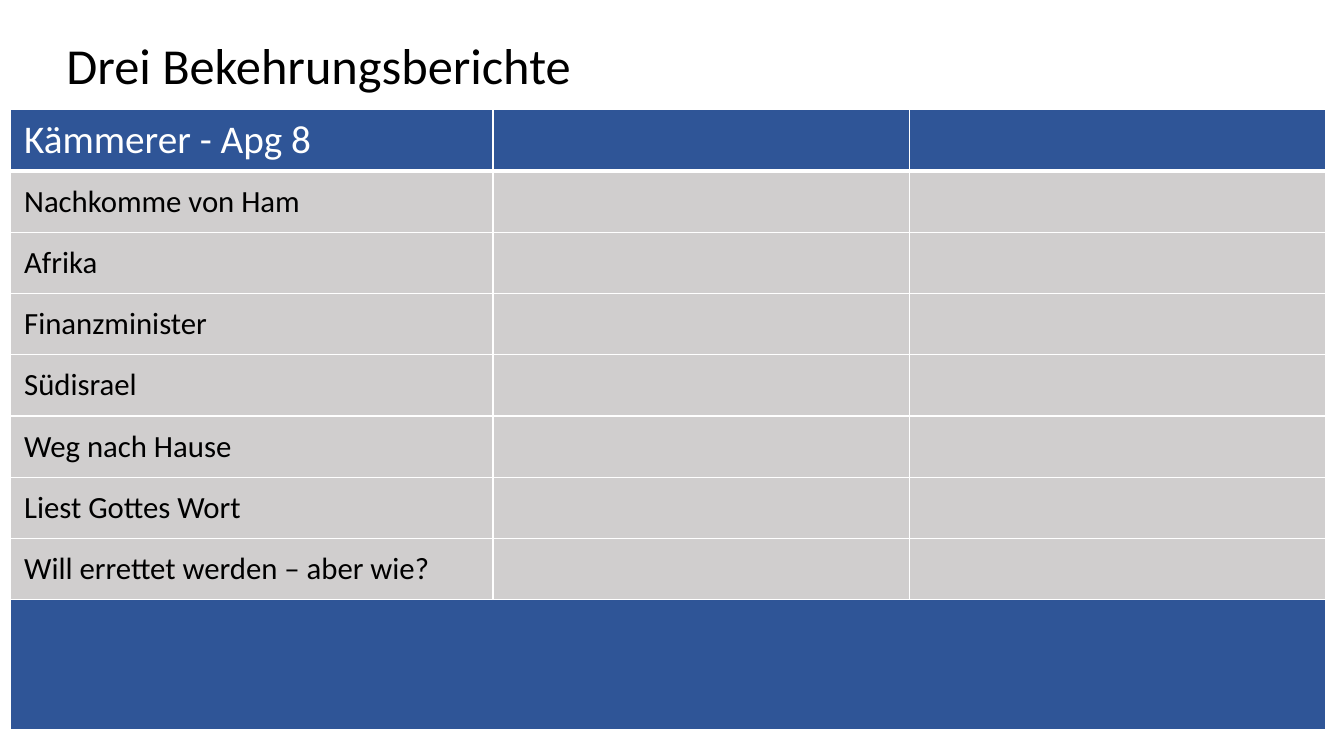
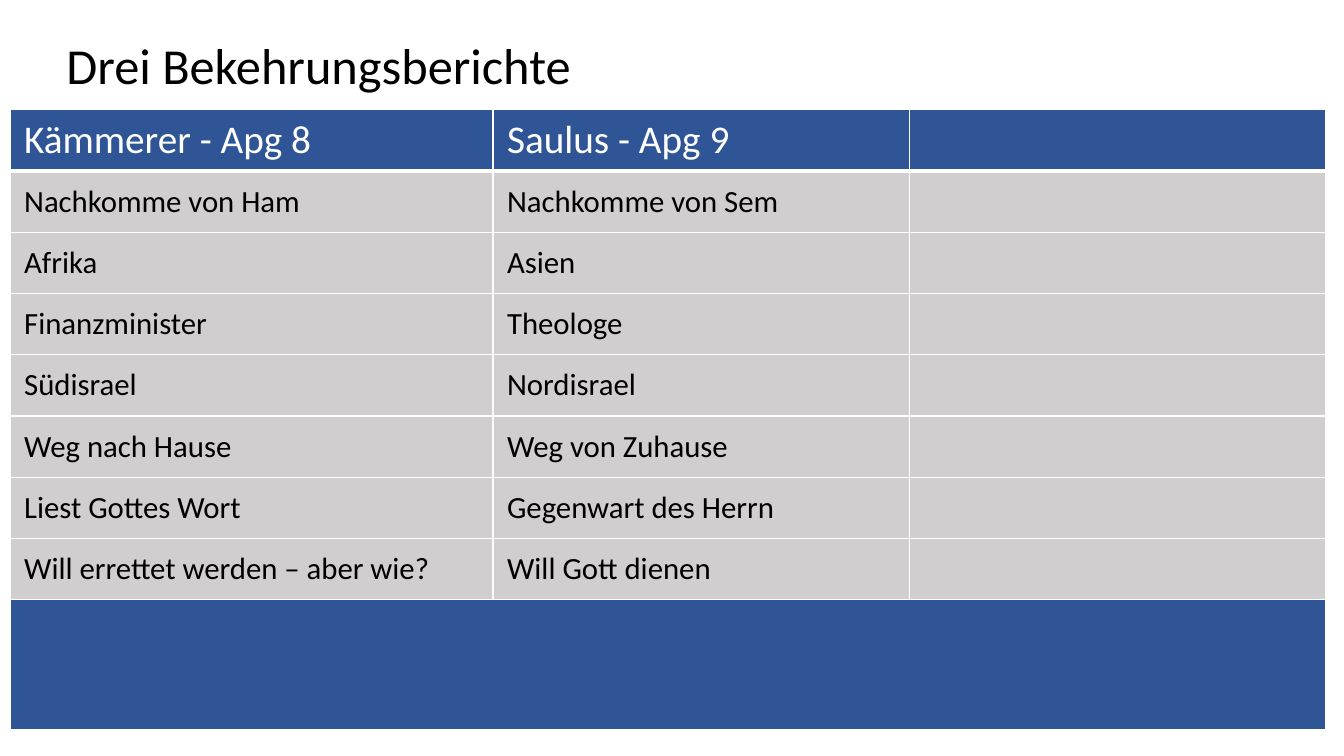
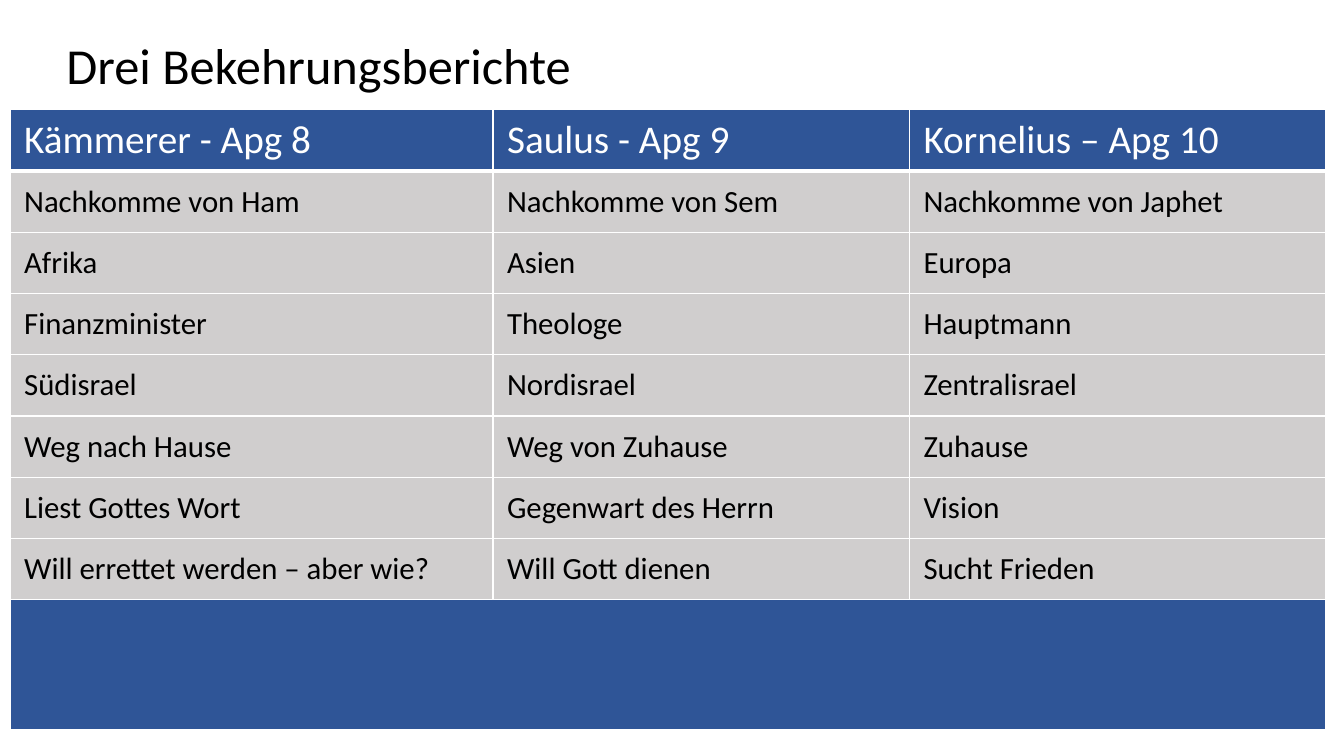
from dataclasses import dataclass

from lxml import etree
from pptx import Presentation
from pptx.dml.color import RGBColor
from pptx.enum.text import MSO_ANCHOR, MSO_AUTO_SIZE
from pptx.oxml.ns import qn
from pptx.util import Inches, Pt

MIDDLE = MSO_ANCHOR.MIDDLE
GROW = MSO_AUTO_SIZE.SHAPE_TO_FIT_TEXT
BLANK_LAYOUT = 6


@dataclass(frozen=True)
class Theme:
    font: str = "Calibri"
    ink: str = "000000"
    white: str = "FFFFFF"
    blue: str = "2F5597"
    grey: str = "D0CECE"
    title_size: int = 36
    header_size: int = 28
    body_size: int = 22
    thin: int = 1
    thick: int = 3


TITLE = "Drei Bekehrungsberichte"
REPORTS = [
    ["Kämmerer - Apg 8", "Nachkomme von Ham", "Afrika", "Finanzminister",
     "Südisrael", "Weg nach Hause", "Liest Gottes Wort",
     "Will errettet werden – aber wie?"],
    ["Saulus - Apg 9", "Nachkomme von Sem", "Asien", "Theologe",
     "Nordisrael", "Weg von Zuhause", "Gegenwart des Herrn",
     "Will Gott dienen"],
    ["Kornelius – Apg 10", "Nachkomme von Japhet", "Europa", "Hauptmann",
     "Zentralisrael", "Zuhause", "Vision", "Sucht Frieden"],
]
TABLE_LEFT, TABLE_TOP, TABLE_HEIGHT = 0.1, 1.09, 6.15
COLUMN_WIDTHS = [4.79, 4.13, 4.13]
BAND_HEIGHT = 1.29


class Deck:
    def __init__(self, theme):
        self.theme = theme
        self.presentation = Presentation()
        self.presentation.slide_width = Inches(13.33)
        self.presentation.slide_height = Inches(7.5)
        self.slide = None

    def add_slide(self):
        layout = self.presentation.slide_layouts[BLANK_LAYOUT]
        self.slide = self.presentation.slides.add_slide(layout)

    def add_text(self, frame, text, size, color):
        run = frame.paragraphs[0].add_run()
        run.text = text
        styling = {"name": self.theme.font, "size": Pt(size), "bold": False}
        for attribute, value in styling.items():
            setattr(run.font, attribute, value)
        run.font.color.rgb = RGBColor.from_string(color)

    def title(self, text):
        box = self.slide.shapes.add_textbox(
            Inches(0.56), Inches(0.29), Inches(5.25), Inches(0.71))
        box.text_frame.word_wrap = False
        box.text_frame.auto_size = GROW
        self.add_text(box.text_frame, text, self.theme.title_size, self.theme.ink)

    def borders(self, cell, top, bottom):
        """Draw white lines round a cell, with the top and bottom widths given in points."""
        thin = self.theme.thin
        properties = cell._tc.get_or_add_tcPr()
        widths = {"a:lnL": thin, "a:lnR": thin, "a:lnT": top, "a:lnB": bottom}
        for side, width in widths.items():
            line = etree.SubElement(properties, qn(side), w=str(Pt(width)))
            fill = etree.SubElement(line, qn("a:solidFill"))
            etree.SubElement(fill, qn("a:srgbClr"), val=self.theme.white)

    def style_cell(self, cell, color, top, bottom):
        self.borders(cell, top, bottom)
        cell.fill.solid()
        cell.fill.fore_color.rgb = RGBColor.from_string(color)
        layout = {"margin_left": Inches(0.14), "margin_right": Inches(0.14),
                  "margin_top": 0, "margin_bottom": 0,
                  "vertical_anchor": MIDDLE}
        for attribute, value in layout.items():
            setattr(cell, attribute, value)

    def comparison(self, reports):
        """Fill one column per report; further columns and the closing band stay empty."""
        theme = self.theme
        band_row = len(reports[0])
        table = self.slide.shapes.add_table(
            band_row + 1, len(COLUMN_WIDTHS), Inches(TABLE_LEFT), Inches(TABLE_TOP),
            Inches(sum(COLUMN_WIDTHS)), Inches(TABLE_HEIGHT)).table
        table.horz_banding = False
        for column, width in zip(table.columns, COLUMN_WIDTHS):
            column.width = Inches(width)
        for row in table.rows:
            row.height = Inches((TABLE_HEIGHT - BAND_HEIGHT) / band_row)
        table.rows[band_row].height = Inches(BAND_HEIGHT)

        for row in range(band_row + 1):
            color = theme.blue if row in (0, band_row) else theme.grey
            top = theme.thick if row == 1 else theme.thin
            bottom = theme.thick if row == 0 else theme.thin
            for column in range(len(COLUMN_WIDTHS)):
                self.style_cell(table.cell(row, column), color, top, bottom)
        table.cell(band_row, 0).merge(table.cell(band_row, len(COLUMN_WIDTHS) - 1))

        for column, report in enumerate(reports):
            for row, text in enumerate(report):
                size, color = ((theme.header_size, theme.white) if row == 0
                               else (theme.body_size, theme.ink))
                self.add_text(table.cell(row, column).text_frame, text, size, color)


def main():
    deck = Deck(Theme())
    for shown in range(1, len(REPORTS) + 1):
        deck.add_slide()
        deck.title(TITLE)
        deck.comparison(REPORTS[:shown])
    deck.presentation.save("out.pptx")


if __name__ == "__main__":
    main()
